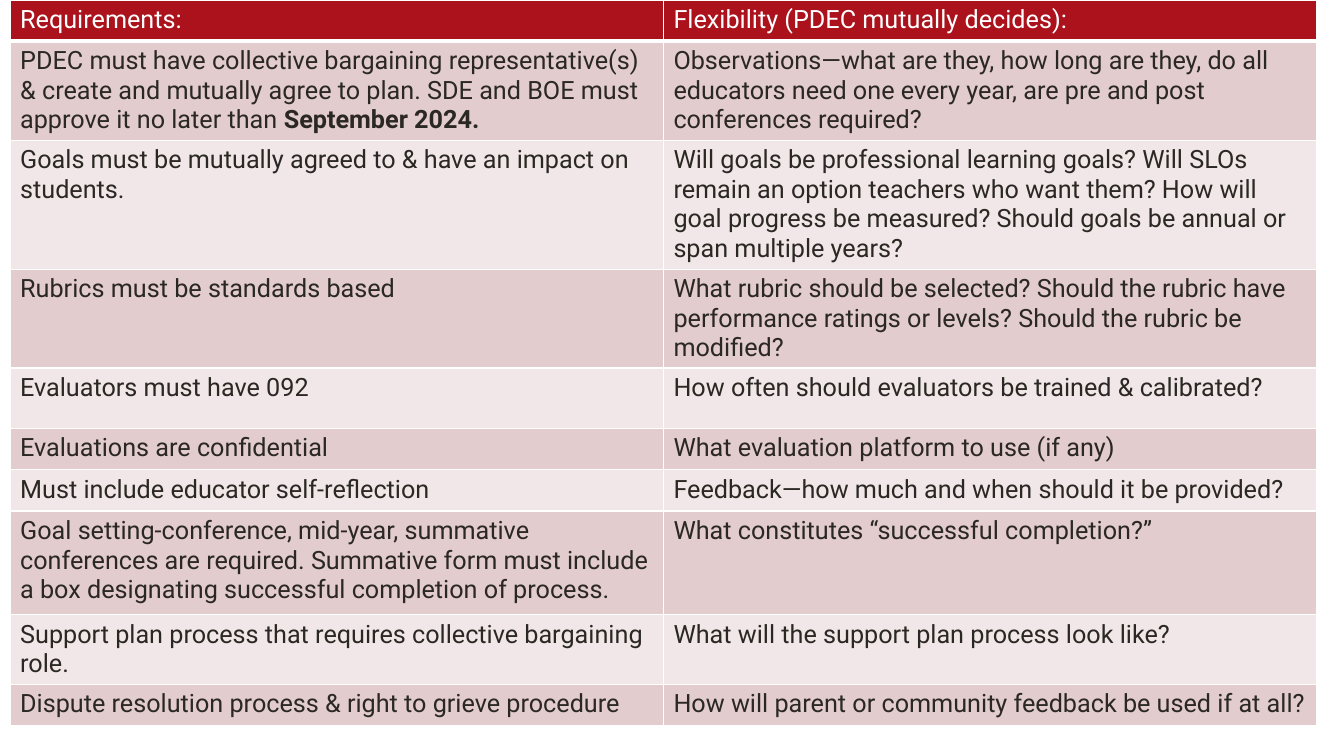
from lxml.etree import SubElement
from pptx import Presentation
from pptx.dml.color import RGBColor
from pptx.oxml.ns import qn
from pptx.util import Inches, Pt

WIDE, HIGH = Inches(13.33), Inches(7.5)
RED = RGBColor(0xAB, 0x12, 0x1C)
ROSE = RGBColor(0xE2, 0xCC, 0xCD)
PALE = RGBColor(0xF1, 0xE7, 0xE8)
INK = RGBColor(0x2B, 0x28, 0x23)
WHITE = RGBColor(0xFF, 0xFF, 0xFF)
FONT, SIZE = "Roboto", Pt(18)
DUE = "September 2024."

HEADS = ("Requirements:", "Flexibility (PDEC mutually decides):")
RULES = [
    (0.97, "PDEC must have collective bargaining representative(s) & create and mutually "
     "agree to plan. SDE and BOE must approve it no later than " + DUE,
     "Observations—what are they, how long are they, do all educators need one every year, "
     "are pre and post conferences required?"),
    (1.28, "Goals must be mutually agreed to & have an impact on students.",
     "Will goals be professional learning goals? Will SLOs remain an option teachers who "
     "want them? How will goal progress be measured? Should goals be annual or span "
     "multiple years?"),
    (0.97, "Rubrics must be standards based",
     "What rubric should be selected? Should the rubric have performance ratings or "
     "levels? Should the rubric be modified?"),
    (0.6, "Evaluators must have 092", "How often should evaluators be trained & calibrated?"),
    (0.41, "Evaluations are confidential", "What evaluation platform to use (if any)"),
    (0.41, "Must include educator self-reflection",
     "Feedback—how much and when should it be provided?"),
    (1.03, "Goal setting-conference, mid-year, summative conferences are required. "
     "Summative form must include a box designating successful completion of process.",
     "What constitutes “successful completion?”"),
    (0.69, "Support plan process that requires collective bargaining role.",
     "What will the support plan process look like?"),
    (0.41, "Dispute resolution process & right to grieve procedure",
     "How will parent or community feedback be used if at all?"),
]


def edge(cell, base):
    """Draw white borders, with the given width in points below."""
    props = cell._tc.get_or_add_tcPr()
    for side, width in (("lnL", 1), ("lnR", 1), ("lnT", 1), ("lnB", base)):
        line = SubElement(props, qn(f"a:{side}"), w=str(Pt(width)))
        fill = SubElement(line, qn("a:solidFill"))
        SubElement(fill, qn("a:srgbClr"), val=str(WHITE))


def write(cell, text, color):
    """Fill a cell with text, setting the due date in bold."""
    para = cell.text_frame.paragraphs[0]
    lead, due, _ = text.partition(DUE)
    para.add_run().text = lead
    if due:
        run = para.add_run()
        run.text = due
        run.font.bold = True
    font = para.font
    font.name, font.size, font.bold = FONT, SIZE, False
    font.color.rgb = color


def fill_row(table, index, height, texts, back, color, base=1):
    """Set the height, look and wording of one table row."""
    table.rows[index].height = Inches(height)
    for cell, text in zip(table.rows[index].cells, texts):
        edge(cell, base)
        cell.fill.solid()
        cell.fill.fore_color.rgb = back
        write(cell, text, color)


def main():
    """Build the slide and save it."""
    deck = Presentation()
    deck.slide_width, deck.slide_height = WIDE, HIGH
    slide = deck.slides.add_slide(deck.slide_layouts[6])
    frame = slide.shapes.add_table(
        len(RULES) + 1, len(HEADS), Inches(0.1), 0, Inches(12.96), Inches(7.18))
    table = frame.table
    fill_row(table, 0, 0.41, HEADS, RED, WHITE, base=3)
    for index, (height, *texts) in enumerate(RULES, 1):
        fill_row(table, index, height, texts, ROSE if index % 2 else PALE, INK)
    deck.save("out.pptx")


if __name__ == "__main__":
    main()
